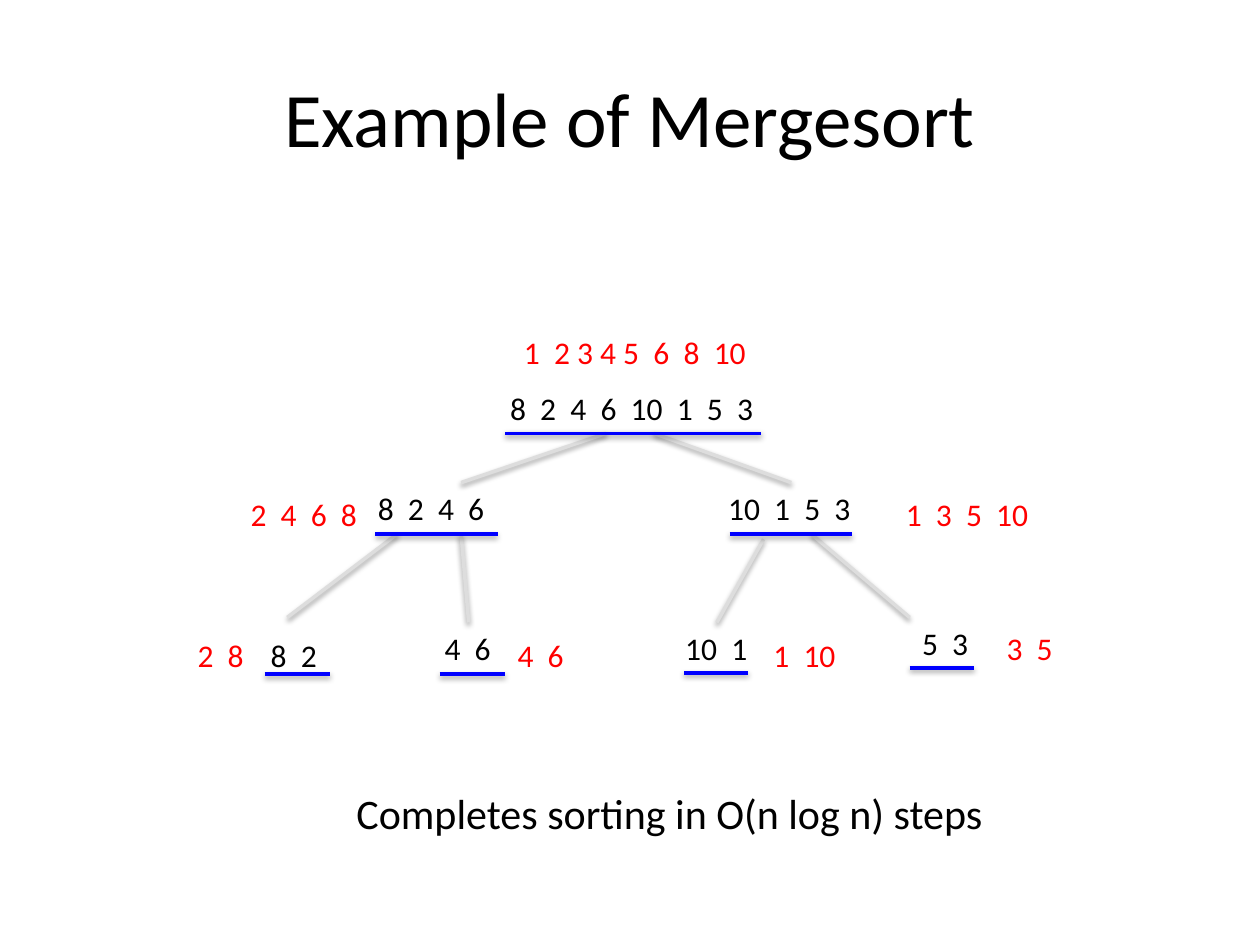
import pptx
import pptx.dml.color
import pptx.enum.shapes
import pptx.enum.text
import pptx.util

PX = 9144  # EMU per px, 100 px to the inch
BLACK = pptx.dml.color.RGBColor(0x00, 0x00, 0x00)
RED = pptx.dml.color.RGBColor(0xFF, 0x00, 0x00)
BLUE = pptx.dml.color.RGBColor(0x00, 0x00, 0xFF)
GREY = pptx.dml.color.RGBColor(0xDD, 0xDD, 0xDD)

# unsorted list, its (left, top, width); sorted list, its (left, top, width);
# underline (left, right, y)
NODES = [
    ("8  2  4  6  10  1  5  3", (395, 304, 215),
     "1  2 3 4 5  6  8  10", (406, 259, 198), (401, 604, 344)),
    ("8  2  4  6", (290, 383, 106),
     "2  4  6  8", (189, 388, 109), (298, 395, 424)),
    ("10  1  5  3", (568, 383, 118),
     "1  3  5  10", (709, 388, 118), (579, 676, 424)),
    ("8  2", (205, 500, 57), "2  8", (147, 500, 57), (210, 262, 535)),
    ("4  6", (343, 494, 57), "4  6", (401, 500, 57), (349, 401, 535)),
    ("10  1", (534, 494, 70), "1  10", (604, 500, 70), (543, 594, 534)),
    ("5  3", (722, 490, 57), "3  5", (789, 494, 57), (722, 773, 530)),
]

BRANCHES = [
    ((481, 344), (366, 383)), ((519, 344), (628, 383)),
    ((315, 424), (228, 490)), ((366, 424), (372, 494)),
    ((606, 428), (569, 494)), ((644, 424), (722, 490)),
]


class SlideBuilder:
    font_name = "Calibri"
    title_size = 44
    list_size = 18
    summary_size = 24
    line_width = 2

    def __init__(self, slide):
        self.slide = slide

    def style(self, paragraph, size, color):
        paragraph.font.name = self.font_name
        paragraph.font.size = pptx.util.Pt(size)
        paragraph.font.color.rgb = color

    def title(self, text, left, top, width, height):
        title = self.slide.shapes.title
        title.left, title.top = left * PX, top * PX
        title.width, title.height = width * PX, height * PX
        title.text_frame.text = text
        title.text_frame.vertical_anchor = pptx.enum.text.MSO_ANCHOR.MIDDLE
        heading = title.text_frame.paragraphs[0]
        heading.alignment = pptx.enum.text.PP_ALIGN.CENTER
        self.style(heading, self.title_size, BLACK)

    def label(self, text, place, color, size=list_size, height=40):
        left, top, width = place
        frame = self.slide.shapes.add_textbox(
            left * PX, top * PX, width * PX, height * PX).text_frame
        frame.word_wrap = False
        frame.auto_size = pptx.enum.text.MSO_AUTO_SIZE.SHAPE_TO_FIT_TEXT
        frame.text = text
        self.style(frame.paragraphs[0], size, color)

    def line(self, start, end, color):
        """Draw a straight line that keeps the soft shadow of the theme."""
        connector = self.slide.shapes.add_connector(
            pptx.enum.shapes.MSO_CONNECTOR.STRAIGHT,
            *(length * PX for length in start + end))
        connector.line.color.rgb = color
        connector.line.width = pptx.util.Pt(self.line_width)


def main():
    deck = pptx.Presentation()
    deck.slide_width, deck.slide_height = 1000 * PX, 750 * PX
    title_only = deck.slide_layouts[5]
    builder = SlideBuilder(deck.slides.add_slide(title_only))

    builder.title("Example of Mergesort", 50, 30, 900, 125)
    for start, end in BRANCHES:
        builder.line(start, end, GREY)
    for unsorted, unsorted_place, merged, merged_place, underline in NODES:
        left, right, y = underline
        builder.label(unsorted, unsorted_place, BLACK)
        builder.line((left, y), (right, y), BLUE)
        builder.label(merged, merged_place, RED)
    builder.label("Completes sorting in O(n log n) steps", (273, 620, 522),
                  BLACK, builder.summary_size, 50)
    deck.save("out.pptx")


if __name__ == "__main__":
    main()
